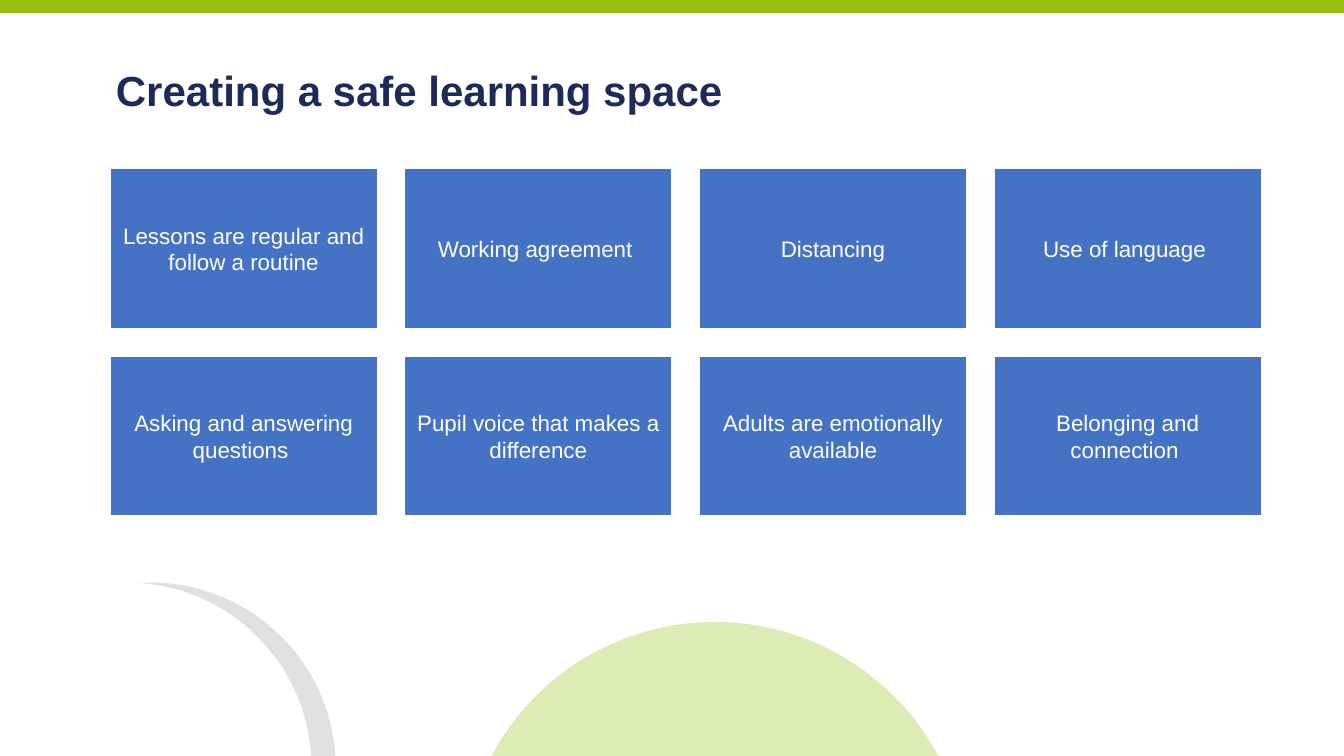
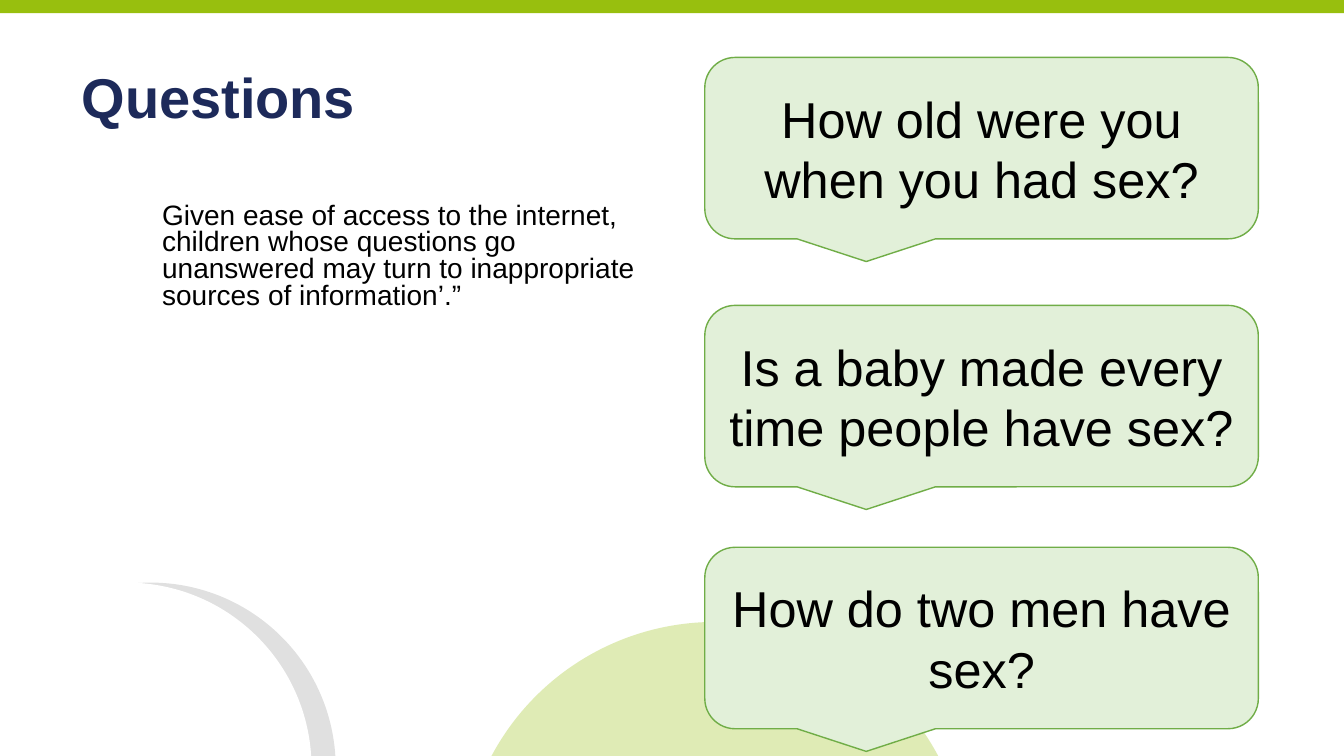
from lxml import etree
from pptx import Presentation
from pptx import util as u
from pptx.dml import color
from pptx.enum import shapes, text
from pptx.oxml import ns

FONT = "Arial"
NAVY, LIME, LEAF = "1D2A5A", "98BF0E", "97BF0D"
BLACK, WHITE, BLUE = "000000", "FFFFFF", "4472C4"
MINT, GREEN = "E2F0D9", "70AD47"
SHAPE = shapes.MSO_SHAPE


def rgb(value):
    return color.RGBColor.from_string(value)


def add_shape(s, kind, box, fill, line=None, alpha=None):
    sp = s.shapes.add_shape(kind, *map(u.Inches, box))
    sp.shadow.inherit = False
    sp.fill.solid()
    sp.fill.fore_color.rgb = rgb(fill)
    if line:
        sp.line.color.rgb = rgb(line)
        sp.line.width = u.Pt(1)
    else:
        sp.line.fill.background()
    if alpha:
        clr = sp.fill._xPr.find(".//" + ns.qn("a:srgbClr"))
        etree.SubElement(clr, ns.qn("a:alpha"), val=str(alpha * 1000))
    return sp


def set_text(sp, words, size, fill, bold=False, spacing=1.0, inset=(0.1, 0.05), centred=False):
    tf = sp.text_frame
    tf.word_wrap = True
    tf.margin_left = tf.margin_right = u.Inches(inset[0])
    tf.margin_top = tf.margin_bottom = u.Inches(inset[1])
    tf.vertical_anchor = text.MSO_ANCHOR.MIDDLE if centred else text.MSO_ANCHOR.TOP
    tf.text = words
    p = tf.paragraphs[0]
    p.alignment = text.PP_ALIGN.CENTER if centred else text.PP_ALIGN.LEFT
    p.line_spacing = spacing
    f = p.runs[0].font
    f.name, f.size, f.bold = FONT, u.Pt(size), bold
    f.color.rgb = rgb(fill)


def add_text(s, box, words, size, fill, **style):
    set_text(s.shapes.add_textbox(*map(u.Inches, box)), words, size, fill, **style)


def add_slide(prs, title, box, size, inset=(0.1, 0.05)):
    s = prs.slides.add_slide(prs.slide_layouts[6])
    add_shape(s, SHAPE.OVAL, (-0.34, 5.78, 3.67, 3.67), BLACK, alpha=12)
    add_shape(s, SHAPE.OVAL, (-0.58, 5.78, 3.67, 3.67), WHITE)
    add_shape(s, SHAPE.RECTANGLE, (0, 0, 13.33, 0.13), LIME)
    add_shape(s, SHAPE.OVAL, (4.58, 6.17, 5.02, 5.02), LEAF, alpha=30)
    add_text(s, box, title, size, NAVY, bold=True, spacing=0.9, inset=inset)
    return s


def card_grid(s, box, labels, cols=4, gap=0.27):
    left, top, width, height = box
    rows = len(labels) // cols
    w = (width - gap * (cols - 1)) / cols
    h = (height - gap * (rows - 1)) / rows
    for i, label in enumerate(labels):
        row, col = divmod(i, cols)
        cell = (left + col * (w + gap), top + row * (h + gap), w, h)
        sp = add_shape(s, SHAPE.RECTANGLE, cell, BLUE, WHITE)
        set_text(sp, label, 16, WHITE, inset=(0.07, 0.07), centred=True)


def question_callouts(s, left, width, height, questions):
    for top, question in questions:
        sp = add_shape(s, SHAPE.ROUNDED_RECTANGULAR_CALLOUT, (left, top, width, height), MINT, GREEN)
        set_text(sp, question, 36, BLACK, centred=True)


def safe_space_slide(prs):
    s = add_slide(prs, "Creating a safe learning space", (1.08, 0.66, 8.46, 1.09), 30, (0.07, 0.04))
    card_grid(s, (1.09, 1.67, 11.42, 3.45), [
        "Lessons are regular and follow a routine",
        "Working agreement ",
        "Distancing",
        "Use of language ",
        "Asking and answering questions ",
        "Pupil voice that makes a difference",
        "Adults are emotionally available",
        "Belonging and connection ",
    ])


def questions_slide(prs):
    s = add_slide(prs, "Questions", (0.71, 0.65, 11.28, 1.09), 40)
    add_text(s, (1.51, 1.97, 4.96, 3.92),
             "Given ease of access to the internet, children whose questions go unanswered "
             "may turn to inappropriate sources of information’.”", 20, BLACK, spacing=0.8)
    question_callouts(s, 6.99, 5.49, 1.8, [
        (0.57, "How old were you when you had sex?"),
        (3.03, "Is a baby made every time people have sex?"),
        (5.43, "How do two men have sex?"),
    ])


def main():
    prs = Presentation()
    prs.slide_width, prs.slide_height = u.Inches(13.33), u.Inches(7.5)
    safe_space_slide(prs)
    questions_slide(prs)
    prs.save("out.pptx")


if __name__ == "__main__":
    main()
